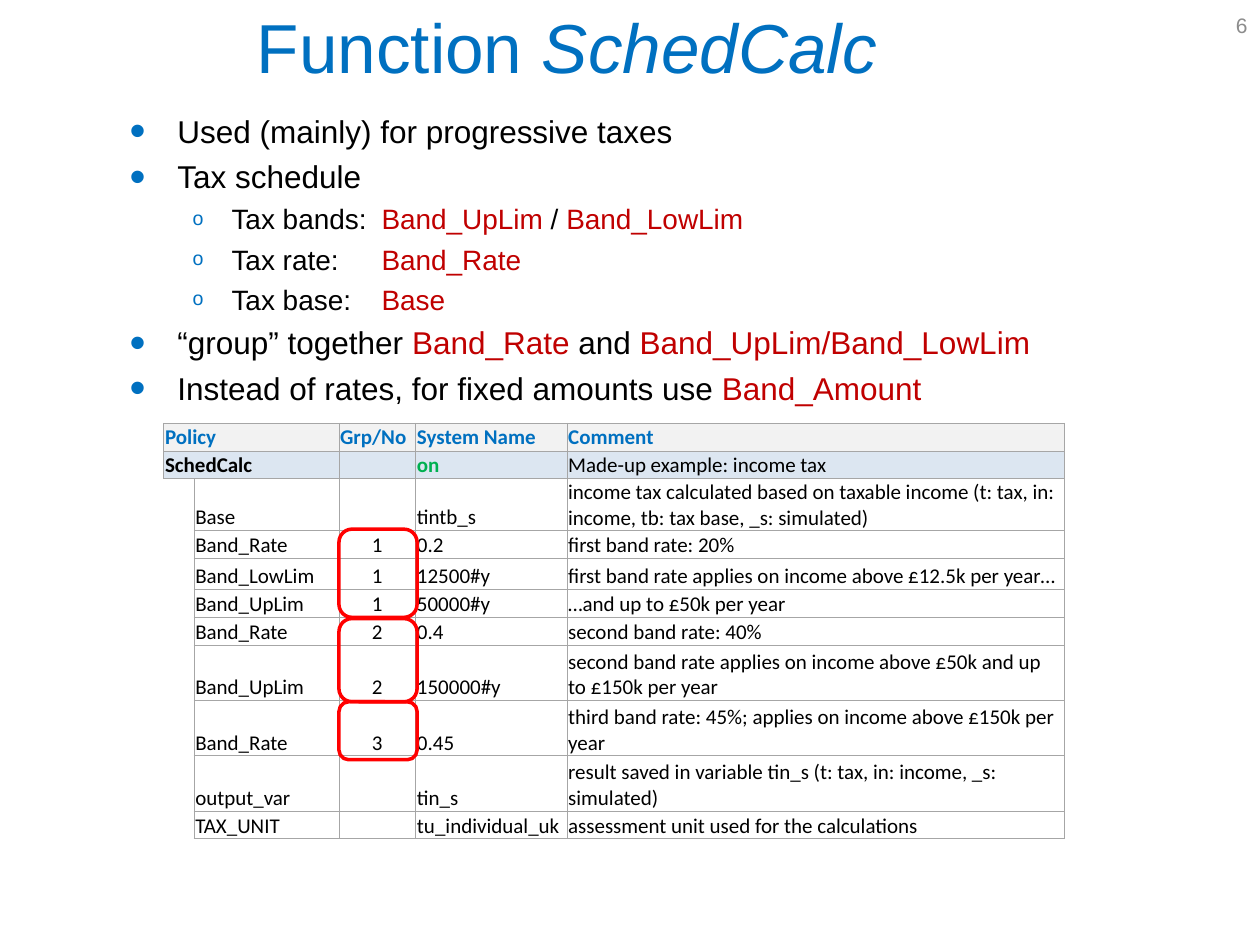
from dataclasses import dataclass

from lxml.etree import SubElement
from pptx import Presentation
from pptx.dml.color import RGBColor
from pptx.enum.shapes import MSO_SHAPE
from pptx.enum.text import MSO_ANCHOR, PP_ALIGN
from pptx.oxml.ns import qn
from pptx.slide import Slide
from pptx.table import _Cell
from pptx.text.text import TextFrame, _Paragraph
from pptx.util import Inches, Pt

BLUE, RED, BLACK, GREEN = "0070C0", "C00000", "000000", "00B050"
GRID = "A6A6A6"


@dataclass
class Span:
    text: str
    color: str = BLACK
    italic: bool = False
    bold: bool = False


@dataclass
class BulletLevel:
    size: float
    margin: float
    hanging: float
    space_before: float
    symbol: str
    symbol_percent: int


@dataclass
class Bullet:
    level: int
    spans: list[Span]


@dataclass
class Parameter:
    name: str
    group: str
    value: str
    comment: str
    height: float = 0.22


@dataclass
class GroupFrame:
    top: float
    height: float


LEVELS = [BulletLevel(18, 0.38, 0.38, 4.3, "•", 145), BulletLevel(16, 0.81, 0.31, 3.8, "o", 70)]
BULLETS = [
    Bullet(0, [Span("Used (mainly) for progressive taxes")]),
    Bullet(0, [Span("Tax schedule")]),
    Bullet(1, [Span("Tax bands: \t"), Span("Band_UpLim ", RED), Span("/ "), Span("Band_LowLim", RED)]),
    Bullet(1, [Span("Tax rate: \t"), Span("Band_Rate", RED)]),
    Bullet(1, [Span("Tax base: \t"), Span("Base", RED)]),
    Bullet(0, [Span("“group” together "), Span("Band_Rate", RED), Span(" and "),
               Span("Band_UpLim/Band_LowLim", RED)]),
    Bullet(0, [Span("Instead of rates, for fixed amounts use "), Span("Band_Amount", RED)]),
]
COLUMN_WIDTHS = [0.24, 1.15, 0.61, 1.2, 3.95]
HEADINGS = ["Policy", "", "Grp/No", "System Name", "Comment"]
PARAMETERS = [
    Parameter("Base", "", "tintb_s",
              "income tax calculated based on taxable income (t: tax, in: income, tb: tax base, _s: simulated)", 0.41),
    Parameter("Band_Rate", "1", "0.2", "first band rate: 20%"),
    Parameter("Band_LowLim", "1", "12500#y", "first band rate applies on income above £12.5k per year…", 0.25),
    Parameter("Band_UpLim", "1", "50000#y", "…and up to £50k per year"),
    Parameter("Band_Rate", "2", "0.4", "second band rate: 40%"),
    Parameter("Band_UpLim", "2", "150000#y",
              "second band rate applies on income above £50k and up to £150k per year", 0.44),
    Parameter("Band_Rate", "3", "0.45", "third band rate: 45%; applies on income above £150k per year", 0.44),
    Parameter("output_var", "", "tin_s",
              "result saved in variable tin_s (t: tax, in: income, _s: simulated)", 0.44),
    Parameter("TAX_UNIT", "", "tu_individual_uk", "assessment unit used for the calculations"),
]
GROUP_FRAMES = [GroupFrame(4.2, 0.7), GroupFrame(4.91, 0.66), GroupFrame(5.57, 0.46)]


def rgb(color: str) -> RGBColor:
    return RGBColor.from_string(color)


def write_spans(paragraph: _Paragraph, spans: list[Span], size: float, font: str = "Arial") -> None:
    for span in spans:
        run = paragraph.add_run()
        run.text = span.text
        run.font.size, run.font.name = Pt(size), font
        run.font.bold, run.font.italic = span.bold, span.italic
        run.font.color.rgb = rgb(span.color)


def add_text(slide: Slide, left: float, top: float, width: float, height: float,
             anchor: MSO_ANCHOR = MSO_ANCHOR.MIDDLE) -> TextFrame:
    box = slide.shapes.add_textbox(Inches(left), Inches(top), Inches(width), Inches(height))
    box.text_frame.word_wrap = True
    box.text_frame.vertical_anchor = anchor
    return box.text_frame


def add_bullets(slide: Slide) -> None:
    frame = add_text(slide, 0.93, 0.84, 9.07, 2.36, MSO_ANCHOR.TOP)
    for index, bullet in enumerate(BULLETS):
        level = LEVELS[bullet.level]
        paragraph = frame.add_paragraph() if index else frame.paragraphs[0]
        paragraph.level = bullet.level
        if index:
            paragraph.space_before = Pt(level.space_before)
        properties = paragraph._p.get_or_add_pPr()
        properties.set("marL", str(Inches(level.margin)))
        properties.set("indent", str(-Inches(level.hanging)))
        SubElement(SubElement(properties, qn("a:buClr")), qn("a:srgbClr"), val=BLUE)
        SubElement(properties, qn("a:buSzPct"), val=str(level.symbol_percent * 1000))
        SubElement(properties, qn("a:buFont"), typeface="Arial")
        SubElement(properties, qn("a:buChar"), char=level.symbol)
        write_spans(paragraph, bullet.spans, level.size)


def set_borders(cell: _Cell, sides: str) -> None:
    properties = cell._tc.get_or_add_tcPr()
    for position, side in enumerate("LRTB"):
        line = SubElement(properties, qn(f"a:ln{side}"), w=str(Pt(0.5)))
        if side in sides:
            SubElement(SubElement(line, qn("a:solidFill")), qn("a:srgbClr"), val=GRID)
        else:
            SubElement(line, qn("a:noFill"))
        properties.insert(position, line)


def fill_cell(cell: _Cell, span: Span, fill: str, anchor: MSO_ANCHOR,
              centred: bool = False, sides: str = "LRTB") -> None:
    cell.fill.solid()
    cell.fill.fore_color.rgb = rgb(fill)
    cell.margin_left = cell.margin_right = cell.margin_top = Inches(0.01)
    cell.margin_bottom = 0
    cell.vertical_anchor = anchor
    paragraph = cell.text_frame.paragraphs[0]
    if centred:
        paragraph.alignment = PP_ALIGN.CENTER
    if span.text:
        write_spans(paragraph, [span], 12, "Calibri")
    else:
        SubElement(paragraph._p, qn("a:endParaRPr"), sz="1200")
    set_borders(cell, sides)


def add_policy_table(slide: Slide) -> None:
    heights = [0.22, 0.22] + [parameter.height for parameter in PARAMETERS]
    table = slide.shapes.add_table(len(heights), len(COLUMN_WIDTHS), Inches(1.3), Inches(3.36),
                                   Inches(sum(COLUMN_WIDTHS)), Inches(sum(heights))).table
    table.first_row = table.horz_banding = False
    for column, width in zip(table.columns, COLUMN_WIDTHS):
        column.width = Inches(width)
    for row, height in zip(table.rows, heights):
        row.height = Inches(height)
    function_row = [Span("SchedCalc", bold=True), Span(""), Span(""), Span("on", GREEN, bold=True),
                    Span("Made-up example: income tax")]
    heading_row = [Span(heading, BLUE, bold=True) for heading in HEADINGS]
    for row, (spans, fill) in enumerate([(heading_row, "F2F2F2"), (function_row, "DCE6F1")]):
        for column, span in enumerate(spans):
            fill_cell(table.cell(row, column), span, fill, MSO_ANCHOR.MIDDLE)
        table.cell(row, 0).merge(table.cell(row, 1))
    for row, parameter in enumerate(PARAMETERS, 2):
        texts = ["", parameter.name, parameter.group, parameter.value, parameter.comment]
        for column, text in enumerate(texts):
            sides = "LRTB" if column else "RT" if row == 2 else "R"
            fill_cell(table.cell(row, column), Span(text), "FFFFFF", MSO_ANCHOR.BOTTOM, column == 2, sides)


def add_group_frame(slide: Slide, group: GroupFrame) -> None:
    frame = slide.shapes.add_shape(MSO_SHAPE.ROUNDED_RECTANGLE, Inches(2.69), Inches(group.top),
                                   Inches(0.62), Inches(group.height))
    frame.shadow.inherit = False
    frame.fill.background()
    frame.line.color.rgb = rgb("FF0000")
    frame.line.width = Pt(2)


def main() -> None:
    """Build the SchedCalc slide and save it."""
    deck = Presentation()
    deck.slide_width, deck.slide_height = Inches(10), Inches(7.5)
    slide = deck.slides.add_slide(deck.slide_layouts[6])
    page_number = add_text(slide, 7.67, 0, 2.33, 0.4).paragraphs[0]
    page_number.alignment = PP_ALIGN.RIGHT
    write_spans(page_number, [Span("6", "8C8C8C")], 12)
    title = add_text(slide, 0, 0.21, 9, 0.31).paragraphs[0]
    title.alignment = PP_ALIGN.CENTER
    write_spans(title, [Span("Function ", BLUE), Span("SchedCalc", BLUE, italic=True)], 39.6)
    add_bullets(slide)
    add_policy_table(slide)
    for group in GROUP_FRAMES:
        add_group_frame(slide, group)
    deck.save("out.pptx")


if __name__ == "__main__":
    main()
